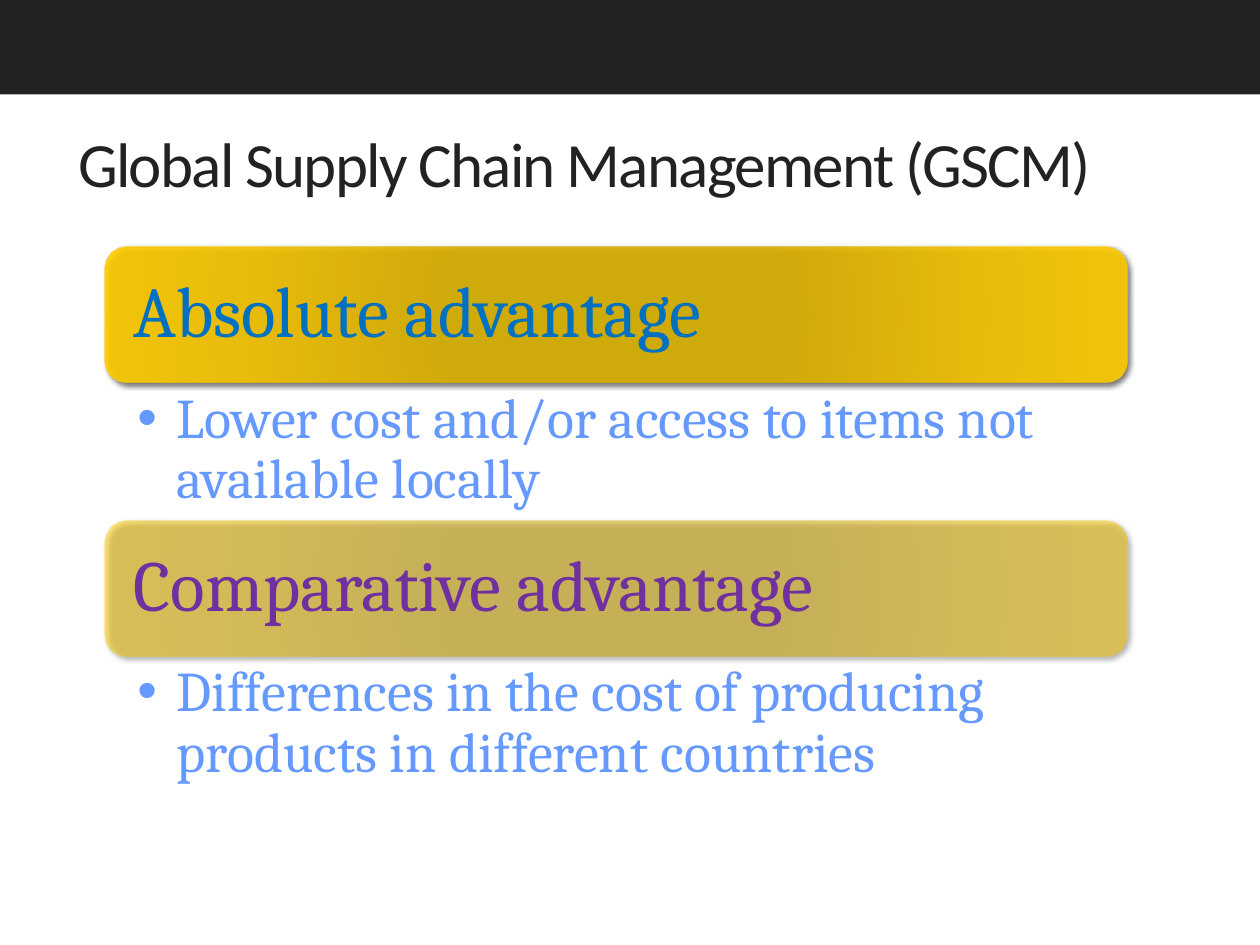
from lxml import etree
from pptx import Presentation
from pptx import util as u
from pptx.dml.color import RGBColor
from pptx.enum import shapes, text
from pptx.oxml import parse_xml
from pptx.oxml.ns import nsdecls, qn

TITLE = "Global Supply Chain Management (GSCM)"
ADVANTAGES = [
    ("Absolute advantage", "0070C0", 90,
     "Lower cost and/or access to items not available locally"),
    ("Comparative advantage", "7030A0", 50,
     "Differences in the cost of producing products in different countries"),
]
GRADIENT = [(0, "DAAF00"), (34, "DAAF00"), (70, "F4C300"), (100, "FFCC00")]
DARK, BULLET_COLOR = "222222", "6699FF"
LEFT, TOP, WIDTH = 60, 141, 584
BAR_HEIGHT, BULLET_HEIGHT = 77.6, 78.7
INSET = 4


def color(value):
    return RGBColor.from_string(value)


def place(shape, left, top, width, height):
    shape.left, shape.top = u.Pt(left), u.Pt(top)
    shape.width, shape.height = u.Pt(width), u.Pt(height)


def write(shape, content, *, font, size, fill, margins,
          anchor=text.MSO_ANCHOR.MIDDLE, line_spacing=1.0, spacing=None, bullet_indent=None):
    frame = shape.text_frame
    frame.word_wrap = True
    frame.auto_size = text.MSO_AUTO_SIZE.NONE
    frame.vertical_anchor = anchor
    (frame.margin_left, frame.margin_top,
     frame.margin_right, frame.margin_bottom) = map(u.Pt, margins)
    frame.text = content
    paragraph = frame.paragraphs[0]
    paragraph.alignment = text.PP_ALIGN.LEFT
    paragraph.line_spacing = line_spacing
    paragraph.space_before = u.Pt(0)
    if bullet_indent:
        paragraph.level = 1
        properties = paragraph._p.get_or_add_pPr()
        properties.set("marL", str(u.Pt(bullet_indent)))
        properties.set("indent", str(-u.Pt(bullet_indent)))
        etree.SubElement(properties, qn("a:buChar"), char="•")
    run = paragraph.runs[0]
    run.font.name, run.font.size = font, u.Pt(size)
    run.font.color.rgb = color(fill)
    if spacing is not None:
        run.font._element.set("spc", str(spacing * 100))


def add_bar(slide, top, opacity):
    bar = slide.shapes.add_shape(
        shapes.MSO_SHAPE.ROUNDED_RECTANGLE,
        u.Pt(LEFT), u.Pt(top), u.Pt(WIDTH), u.Pt(BAR_HEIGHT))
    bar.line.fill.background()
    stops = "".join(
        f'<a:gs pos="{position * 1000}"><a:srgbClr val="{value}">'
        f'<a:alpha val="{opacity * 1000}"/></a:srgbClr></a:gs>'
        for position, value in GRADIENT)
    gradient = parse_xml(
        f'<a:gradFill {nsdecls("a")} rotWithShape="1"><a:gsLst>{stops}</a:gsLst>'
        '<a:path path="circle"><a:fillToRect l="100000" t="100000" '
        'r="100000" b="100000"/></a:path></a:gradFill>')
    shadow = parse_xml(
        f'<a:effectLst {nsdecls("a")}><a:outerShdw blurRad="{u.Pt(3)}" '
        f'dist="{u.Pt(2)}" dir="{45 * 60000}" algn="tl" rotWithShape="0">'
        '<a:srgbClr val="000000"><a:alpha val="60000"/></a:srgbClr>'
        '</a:outerShdw></a:effectLst>')
    properties = bar._element.spPr
    properties.find(qn("a:prstGeom")).addnext(gradient)
    properties.append(shadow)


def main():
    presentation = Presentation()
    presentation.slide_width, presentation.slide_height = u.Pt(720), u.Pt(540)
    slide = presentation.slides.add_slide(presentation.slide_layouts[3])
    title, *bodies = list(slide.placeholders)[:3]

    banner = slide.shapes.add_shape(
        shapes.MSO_SHAPE.RECTANGLE, 0, 0, u.Pt(720), u.Pt(54))
    banner.shadow.inherit = False
    banner.fill.solid()
    banner.fill.fore_color.rgb = color(DARK)
    banner.line.fill.background()

    place(title, 37.4, 54, 648, 78)
    write(title, TITLE, font="Calibri", size=36, fill=DARK,
          margins=(7.2, 7.2, 7.2, 7.2), spacing=-1)

    for index, (heading, fill, opacity, detail) in enumerate(ADVANTAGES):
        top = TOP + index * (BAR_HEIGHT + BULLET_HEIGHT)
        add_bar(slide, top, opacity)
        label = slide.shapes.add_textbox(0, 0, 0, 0)
        place(label, LEFT + INSET, top + INSET,
              WIDTH - 2 * INSET, BAR_HEIGHT - 2 * INSET)
        write(label, heading, font="Cambria", size=41, fill=fill,
              margins=(12.3, 12.3, 12.3, 12.3), line_spacing=0.9)
        body = bodies[index]
        place(body, LEFT, top + BAR_HEIGHT, WIDTH, BULLET_HEIGHT)
        write(body, detail, font="Cambria", size=32, fill=BULLET_COLOR,
              margins=(18.5, 4.1, 23, 4.1), anchor=text.MSO_ANCHOR.TOP,
              line_spacing=0.9, bullet_indent=22.5)

    presentation.save("out.pptx")


if __name__ == "__main__":
    main()
